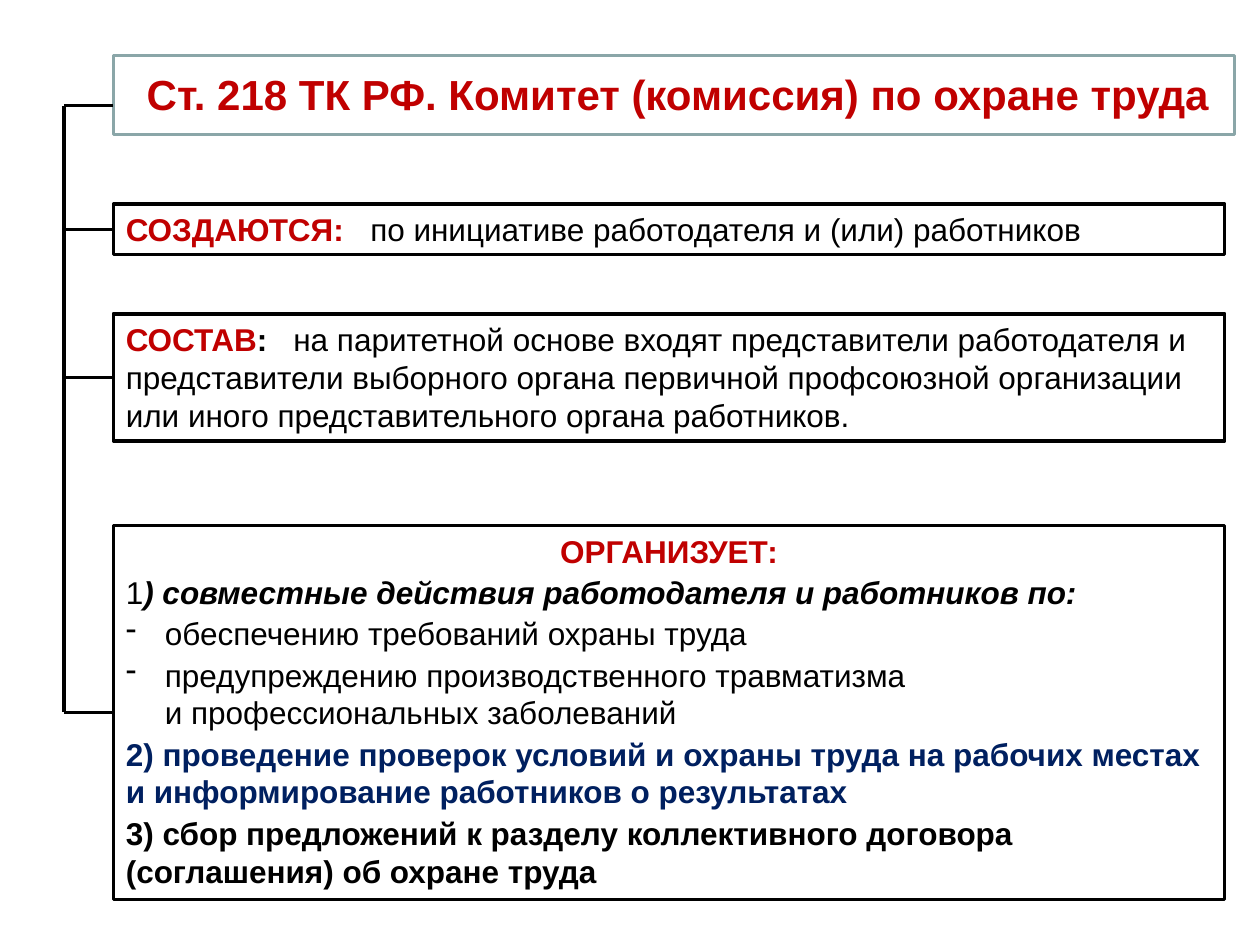
from lxml import etree
from pptx import Presentation
from pptx.dml.color import RGBColor
from pptx.enum.shapes import MSO_CONNECTOR, MSO_SHAPE
from pptx.enum.text import MSO_ANCHOR, MSO_AUTO_SIZE, PP_ALIGN
from pptx.oxml.ns import qn
from pptx.util import Inches, Pt

RECTANGLE = MSO_SHAPE.RECTANGLE
STRAIGHT = MSO_CONNECTOR.STRAIGHT
LEFT, CENTER = PP_ALIGN.LEFT, PP_ALIGN.CENTER
MIDDLE, TOP = MSO_ANCHOR.MIDDLE, MSO_ANCHOR.TOP
NO_FIT, GROW = MSO_AUTO_SIZE.NONE, MSO_AUTO_SIZE.SHAPE_TO_FIT_TEXT
LEFT_SIDE = 1

BLACK, WHITE, RED, NAVY, GREY = "000000", "FFFFFF", "C00000", "002060", "8AA6A8"
BOX_LEFT, BOX_WIDTH = 0.9, 8.82
SPINE_X, SPINE_TOP = 0.51, 0.84


def color(hex_value):
    return RGBColor.from_string(hex_value)


def add_text(paragraph, text, size=18, fill=BLACK, bold=False, italic=False):
    run = paragraph.add_run()
    run.text = text
    font = run.font
    font.name, font.size = "Arial", Pt(size)
    font.bold, font.italic = bold, italic
    font.color.rgb = color(fill)


def add_bullet(paragraph, mark, indent):
    properties = paragraph._p.get_or_add_pPr()
    properties.set("marL", str(Inches(indent)))
    properties.set("indent", str(-Inches(indent)))
    etree.SubElement(properties, qn("a:buChar")).set("char", mark)


def add_tab_stop(paragraph, position):
    tabs = etree.SubElement(paragraph._p.get_or_add_pPr(), qn("a:tabLst"))
    stop = etree.SubElement(tabs, qn("a:tab"))
    stop.set("pos", str(Inches(position)))
    stop.set("algn", "l")


class SchemeSlide:
    def __init__(self, presentation):
        self.slide = presentation.slides.add_slide(presentation.slide_layouts[5])

    def title(self, text, left, top, width, height):
        title = self.slide.shapes.title
        title.left, title.top = Inches(left), Inches(top)
        title.width, title.height = Inches(width), Inches(height)
        frame = title.text_frame
        frame.auto_size, frame.vertical_anchor = NO_FIT, MIDDLE
        frame.word_wrap = True
        frame.paragraphs[0].alignment = CENTER
        add_text(frame.paragraphs[0], text, size=24, fill=RED, bold=True)

    def box(self, top, height, width=BOX_WIDTH, line=BLACK, fill=WHITE):
        box = self.slide.shapes.add_shape(
            RECTANGLE, Inches(BOX_LEFT), Inches(top), Inches(width), Inches(height))
        box.shadow.inherit = False
        if fill:
            box.fill.solid()
            box.fill.fore_color.rgb = color(fill)
        else:
            box.fill.background()
        box.line.color.rgb = color(line)
        box.line.width = Pt(2)
        frame = box.text_frame
        frame.word_wrap, frame.vertical_anchor = True, TOP
        frame.paragraphs[0].alignment = LEFT
        return box

    def labelled_box(self, top, height, label, text, tab, colon_fill):
        box = self.box(top, height)
        box.text_frame.auto_size = GROW
        paragraph = box.text_frame.paragraphs[0]
        add_tab_stop(paragraph, tab)
        add_text(paragraph, label, fill=RED, bold=True)
        add_text(paragraph, ":", fill=colon_fill, bold=True)
        add_text(paragraph, "\t" + text)
        return box

    def line(self, start, end, width=1.5):
        connector = self.slide.shapes.add_connector(STRAIGHT, *start, *end)
        connector.line.color.rgb = color(BLACK)
        connector.line.width = Pt(width)
        etree.SubElement(connector._element.spPr, qn("a:effectLst"))
        return connector

    def branch(self, box):
        """Join the spine to the middle of the box's left side."""
        middle = box.top + box.height // 2
        connector = self.line((Inches(SPINE_X), middle), (box.left, middle))
        connector.end_connect(box, LEFT_SIDE)


def fill_duties(box):
    frame = box.text_frame
    frame.auto_size = GROW

    def next_paragraph():
        paragraph = frame.add_paragraph()
        paragraph.alignment, paragraph.space_before = LEFT, Pt(2)
        return paragraph

    heading = frame.paragraphs[0]
    heading.alignment = CENTER
    add_text(heading, "ОРГАНИЗУЕТ:", fill=RED, bold=True)

    joint_actions = next_paragraph()
    add_text(joint_actions, "1")
    add_text(joint_actions, ") совместные действия работодателя и работников по:",
             bold=True, italic=True)

    for lines in (["обеспечению требований охраны труда"],
                  ["предупреждению производственного травматизма",
                   "и профессиональных заболеваний"]):
        aim = next_paragraph()
        add_bullet(aim, "-", 0.31)
        for number, text in enumerate(lines):
            if number:
                aim.add_line_break()
            add_text(aim, text)

    for text, fill in (
            ("2) проведение проверок условий и охраны труда на рабочих местах "
             "и информирование работников о результатах", NAVY),
            ("3) сбор предложений к разделу коллективного договора "
             "(соглашения) об охране труда", BLACK)):
        add_text(next_paragraph(), text, fill=fill, bold=True)


def main():
    presentation = Presentation()
    presentation.slide_width, presentation.slide_height = Inches(10), Inches(7.5)
    scheme = SchemeSlide(presentation)

    scheme.title("Ст. 218 ТК РФ. Комитет (комиссия) по охране труда", 0.88, 0.36, 9, 0.77)
    scheme.box(0.44, 0.63, width=8.9, line=GREY, fill=None)
    creation = scheme.labelled_box(
        1.62, 0.4, "СОЗДАЮТСЯ", "по инициативе работодателя и (или) работников",
        tab=1.94, colon_fill=RED)
    members = scheme.labelled_box(
        2.49, 1.01, "СОСТАВ",
        "на паритетной основе входят представители работодателя и представители "
        "выборного органа первичной профсоюзной организации или иного "
        "представительного органа работников.",
        tab=1.33, colon_fill=BLACK)
    duties = scheme.box(4.17, 2.97)
    fill_duties(duties)

    spine_x, spine_top = Inches(SPINE_X), Inches(SPINE_TOP)
    scheme.line((spine_x, spine_top), (spine_x, duties.top + duties.height // 2), width=2.25)
    scheme.line((spine_x, spine_top), (Inches(BOX_LEFT), spine_top))
    for box in (creation, members, duties):
        scheme.branch(box)

    presentation.save("out.pptx")


if __name__ == "__main__":
    main()
